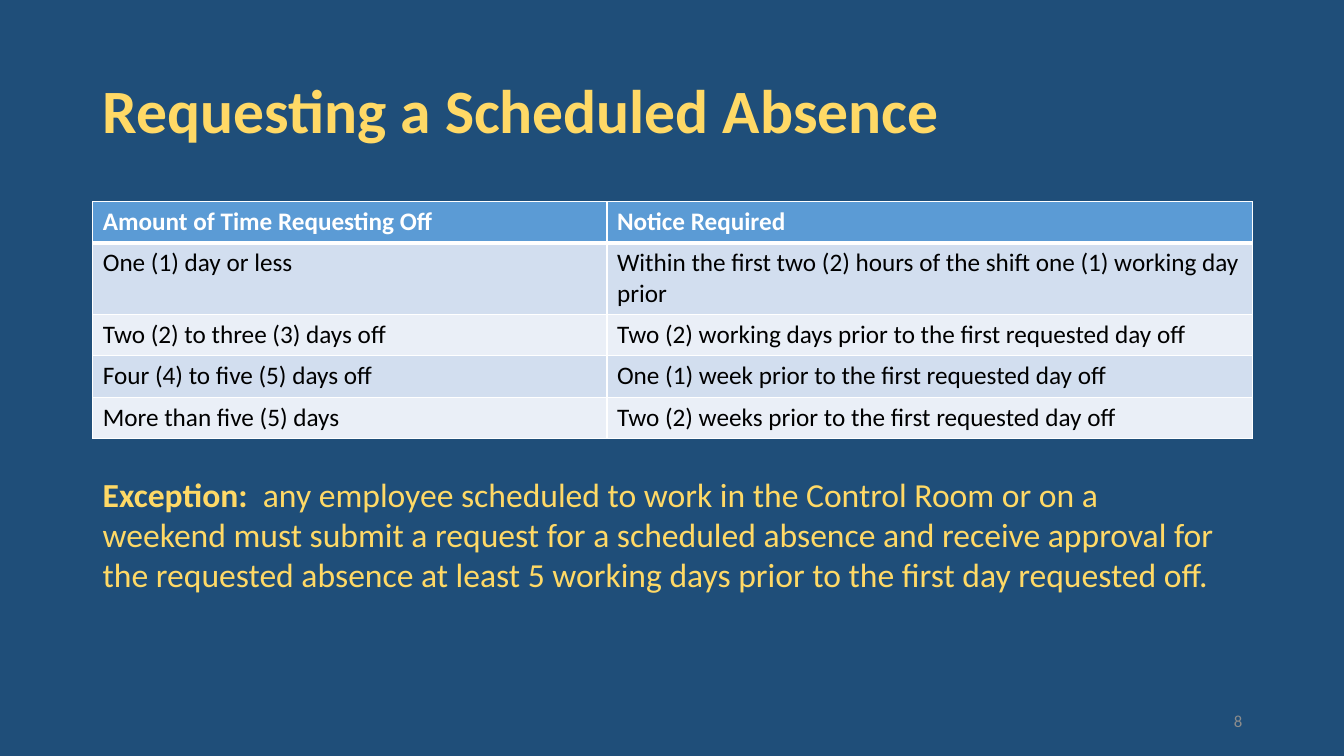
import pptx
import pptx.util
import pptx.dml.color
import pptx.enum.text
import lxml.etree

HUES = {
    "back": "1F4E79", "gold": "FFD966", "head": "5B9BD5", "odd": "D2DEEF",
    "even": "EAEFF7", "white": "FFFFFF", "black": "000000", "gray": "8C8C8C",
}
ROWS = [
    ("Amount of Time Requesting Off", "Notice Required"),
    ("One (1) day or less",
     "Within the first two (2) hours of the shift one (1) working day prior"),
    ("Two (2) to three (3) days off",
     "Two (2) working days prior to the first requested day off"),
    ("Four (4) to five (5) days off",
     "One (1) week prior to the first requested day off"),
    ("More than five (5) days",
     "Two (2) weeks prior to the first requested day off"),
]
NOTE = ("any employee scheduled to work in the Control Room or on a weekend "
        "must submit a request for a scheduled absence and receive approval "
        "for the requested absence at least 5 working days prior to the first "
        "day requested off.")
WIDE, HIGH = 13.33, 7.5
LEFT, SPAN = 0.92, 11.5
ANCHOR = pptx.enum.text.MSO_ANCHOR
ALIGN = pptx.enum.text.PP_ALIGN


def tint(name):
    """Return the named colour."""
    return pptx.dml.color.RGBColor.from_string(HUES[name])


def inches(box):
    """Turn a box in inches into lengths."""
    return [pptx.util.Inches(part) for part in box]


def write(para, text, size, hue, bold=False):
    """Add one run to a paragraph."""
    run = para.add_run()
    run.text = text
    run.font.name = "Calibri"
    run.font.size = pptx.util.Pt(size)
    run.font.bold = bold
    run.font.color.rgb = tint(hue)


def add_title(slide, box):
    """Fill the title placeholder and move it to the box."""
    title = slide.shapes.title
    title.left, title.top, title.width, title.height = inches(box)
    title.text_frame.vertical_anchor = ANCHOR.MIDDLE
    para = title.text_frame.paragraphs[0]
    para.alignment = ALIGN.LEFT
    para.line_spacing = 0.9
    write(para, "Requesting a Scheduled Absence", 44, "gold", True)


def edge(cell, side, width):
    """Draw a white border on one side of a cell."""
    space = "{http://schemas.openxmlformats.org/drawingml/2006/main}"
    line = lxml.etree.SubElement(cell._tc.get_or_add_tcPr(), space + "ln" + side,
                                 w=str(pptx.util.Pt(width)))
    fill = lxml.etree.SubElement(line, space + "solidFill")
    lxml.etree.SubElement(fill, space + "srgbClr", val=HUES["white"])


def add_grid(slide, box):
    """Place the table of notice periods in the box."""
    grid = slide.shapes.add_table(len(ROWS), 2, *inches(box)).table
    first = 5.1
    for col, width in zip(grid.columns, (first, box[2] - first)):
        col.width = pptx.util.Inches(width)
    for i, texts in enumerate(ROWS):
        grid.rows[i].height = pptx.util.Inches(box[3] / len(ROWS))
        head = i == 0
        for j, text in enumerate(texts):
            cell = grid.cell(i, j)
            for side in "LRTB":
                thick = (head and side == "B") or (i == 1 and side == "T")
                edge(cell, side, 3 if thick else 1)
            cell.fill.solid()
            cell.fill.fore_color.rgb = tint("head" if head else "odd" if i % 2 else "even")
            write(cell.text_frame.paragraphs[0], text, 18,
                  "white" if head else "black", head)


def add_text(slide, box, runs, size, hue, align=ALIGN.LEFT, anchor=ANCHOR.TOP):
    """Place a wrapped text box of plain and bold runs."""
    frame = slide.shapes.add_textbox(*inches(box)).text_frame
    frame.word_wrap = True
    frame.vertical_anchor = anchor
    para = frame.paragraphs[0]
    para.alignment = align
    for text, bold in runs:
        write(para, text, size, hue, bold)


def main():
    """Build the slide and save it."""
    deck = pptx.Presentation()
    deck.slide_width, deck.slide_height = inches((WIDE, HIGH))
    slide = deck.slides.add_slide(deck.slide_layouts[5])
    slide.background.fill.solid()
    slide.background.fill.fore_color.rgb = tint("back")
    add_title(slide, (LEFT, 0.4, SPAN, 1.45))
    add_grid(slide, (LEFT, 2, SPAN, 2.05))
    add_text(slide, (LEFT, 4.65, 11.32, 1.31),
             [("Exception:  ", True), (NOTE, False)], 24, "gold")
    add_text(slide, (LEFT + SPAN - 3, 6.95, 3, 0.4), [("8", False)], 12, "gray",
             ALIGN.RIGHT, ANCHOR.MIDDLE)
    deck.save("out.pptx")


if __name__ == "__main__":
    main()
